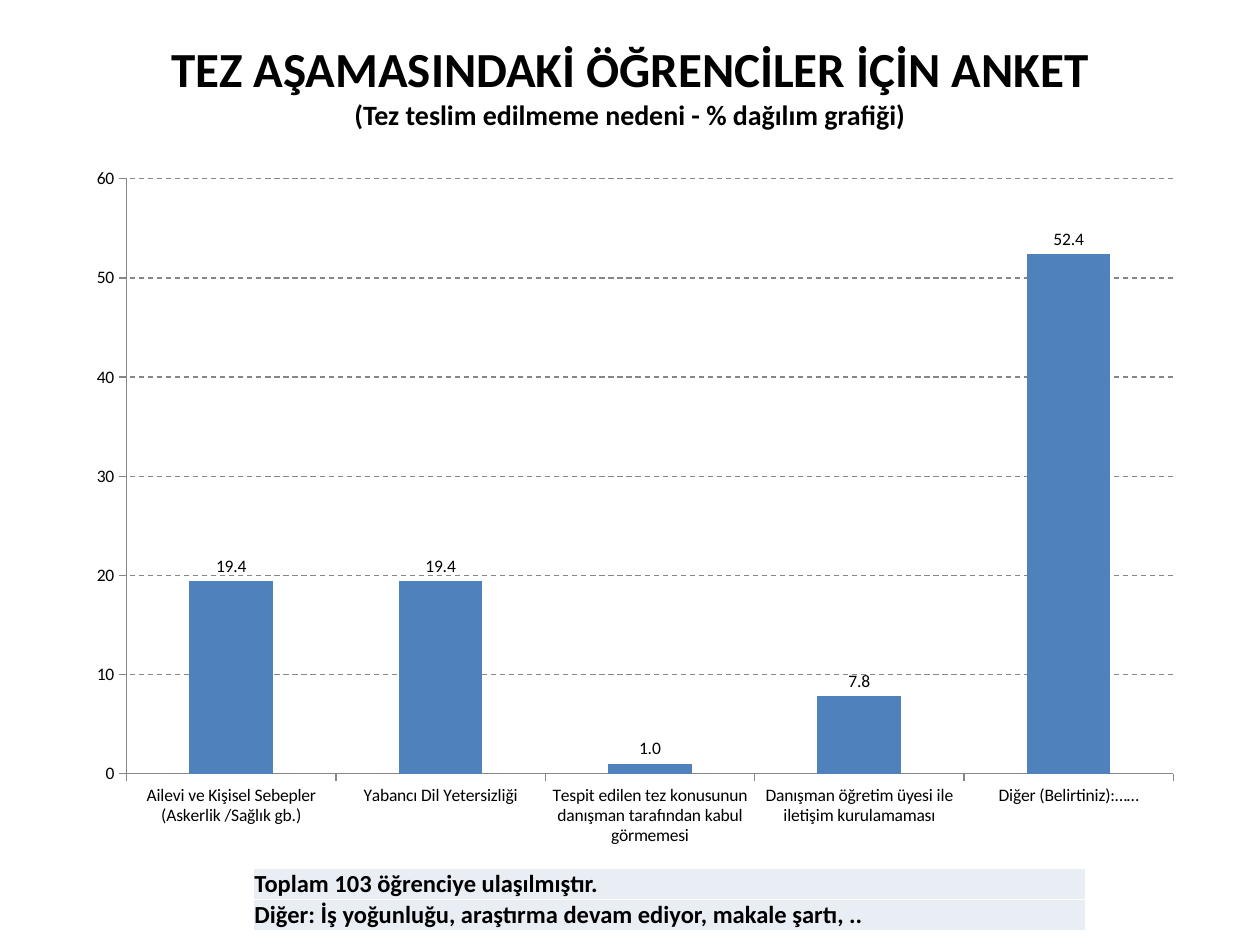
from lxml.etree import SubElement
from pptx import Presentation
from pptx.chart.data import CategoryChartData
from pptx.dml.color import RGBColor
from pptx.enum.chart import XL_CHART_TYPE as ChartType, XL_LABEL_POSITION as LabelPosition, XL_TICK_MARK as Tick
from pptx.enum.dml import MSO_LINE_DASH_STYLE as Dash
from pptx.enum.text import MSO_ANCHOR as Anchor, PP_ALIGN as Align
from pptx.oxml.ns import qn
from pptx.util import Inches, Pt

COLUMNS, ROWS = 100, 75
COLORS = {"text": "000000", "bar": "4F81BD", "axis": "868686", "band": "E9EDF4", "border": "FFFFFF"}

REASONS = {
    "Ailevi ve Kişisel Sebepler (Askerlik /Sağlık gb.)": 19.4,
    "Yabancı Dil Yetersizliği": 19.4,
    "Tespit edilen tez konusunun danışman tarafından kabul görmemesi": 1,
    "Danışman öğretim üyesi ile iletişim kurulamaması": 7.8,
    "Diğer (Belirtiniz):……": 52.4,
}
HEADING = [
    ("TEZ AŞAMASINDAKİ ÖĞRENCİLER İÇİN ANKET", 28),
    ("(Tez teslim edilmeme nedeni - % dağılım grafiği)", 16),
]
REMARKS = [
    "Toplam 103 öğrenciye ulaşılmıştır.",
    "Diğer: İş yoğunluğu, araştırma devam ediyor, makale şartı, ..",
]


def apply(target, values):
    for name, value in values.items():
        setattr(target, name, value)


def color(name):
    return RGBColor.from_string(COLORS[name])


class SurveySlide:
    font_name = "Calibri"

    def __init__(self, deck):
        self.width, self.height = deck.slide_width, deck.slide_height
        self.slide = deck.slides.add_slide(deck.slide_layouts[6])

    def place(self, left, top, width, height):
        return (
            int(left * self.width / COLUMNS),
            int(top * self.height / ROWS),
            int(width * self.width / COLUMNS),
            int(height * self.height / ROWS),
        )

    def style(self, font, size, bold=False):
        apply(font, {"name": self.font_name, "size": Pt(size), "bold": bold})
        font.color.rgb = color("text")

    def heading(self, area, lines):
        frame = self.slide.shapes.add_textbox(*self.place(*area)).text_frame
        apply(frame, {"word_wrap": True, "vertical_anchor": Anchor.MIDDLE})
        paragraph = frame.paragraphs[0]
        paragraph.alignment = Align.CENTER
        for index, (text, size) in enumerate(lines):
            if index:
                paragraph.add_line_break()
            run = paragraph.add_run()
            run.text = text
            self.style(run.font, size, bold=True)

    def column_chart(self, area, shares):
        data = CategoryChartData(number_format="0.0")
        data.categories = list(shares)
        data.add_series("Series 1", list(shares.values()))
        chart = self.slide.shapes.add_chart(ChartType.COLUMN_CLUSTERED, *self.place(*area), data).chart
        apply(chart, {"has_legend": False, "has_title": False})
        self.style(chart.font, 10)

        plot = chart.plots[0]
        apply(plot, {"gap_width": 150, "vary_by_categories": False, "has_data_labels": True})
        apply(plot.data_labels, {
            "show_value": True,
            "number_format": "0.0",
            "number_format_is_linked": False,
            "position": LabelPosition.OUTSIDE_END,
        })
        bars = plot.series[0].format.fill
        bars.solid()
        bars.fore_color.rgb = color("bar")

        scale = chart.value_axis
        apply(scale, {"minimum_scale": 0, "maximum_scale": 60, "major_unit": 10, "has_major_gridlines": True})
        apply(scale.tick_labels, {"number_format": "0", "number_format_is_linked": False})
        for axis in (chart.category_axis, scale):
            apply(axis, {"major_tick_mark": Tick.OUTSIDE, "minor_tick_mark": Tick.NONE})
        gridlines = scale.major_gridlines.format.line
        for line in (chart.category_axis.format.line, scale.format.line, gridlines):
            line.color.rgb = color("axis")
            line.width = Pt(0.75)
        gridlines.dash_style = Dash.DASH

    def border(self, cell):
        properties = cell._tc.get_or_add_tcPr()
        for position, side in enumerate(("a:lnL", "a:lnR", "a:lnT", "a:lnB")):
            line = SubElement(properties, qn(side), w=str(Pt(1)))
            fill = SubElement(line, qn("a:solidFill"))
            SubElement(fill, qn("a:srgbClr"), val=COLORS["border"])
            properties.insert(position, line)

    def table(self, area, remarks):
        grid = self.slide.shapes.add_table(len(remarks), 1, *self.place(*area)).table
        apply(grid, {"first_row": False, "horz_banding": False})
        inset = Inches(0.01)
        for index, remark in enumerate(remarks):
            cell = grid.cell(index, 0)
            apply(cell, {
                "text": remark,
                "vertical_anchor": Anchor.BOTTOM,
                "margin_left": inset,
                "margin_right": inset,
                "margin_top": inset,
                "margin_bottom": 0,
            })
            self.style(cell.text_frame.paragraphs[0].runs[0].font, 14, bold=True)
            cell.fill.solid()
            cell.fill.fore_color.rgb = color("band")
            self.border(cell)


def main():
    deck = Presentation()
    apply(deck, {"slide_width": Inches(10), "slide_height": Inches(7.5)})
    survey = SurveySlide(deck)
    survey.column_chart((5.9, 12.3, 89, 55.9), REASONS)
    survey.table((20.1, 68.9, 66.1, 4.8), REMARKS)
    survey.heading((5, 0.5, 90, 12.5), HEADING)
    deck.save("out.pptx")


if __name__ == "__main__":
    main()
